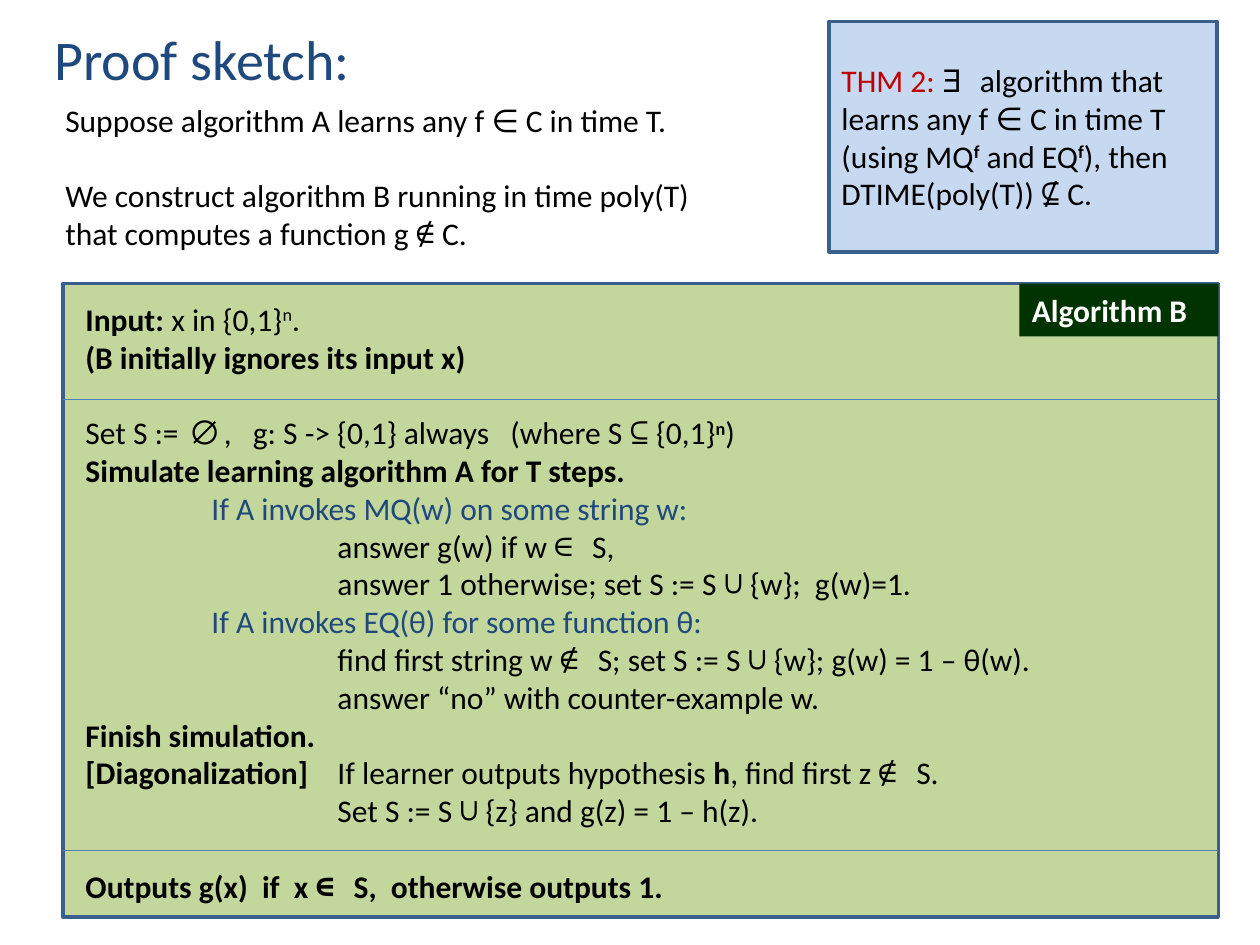
from pptx import Presentation
from pptx.dml.color import RGBColor
from pptx.enum import shapes, text
from pptx.oxml.ns import qn
from pptx.util import Inches, Pt
from lxml import etree

BLACK, NAVY, RED, WHITE = "000000", "1F497D", "C00000", "FFFFFF"
EDGE, RULE = "3A5F8C", "4B7EBC"
COLORS = {"n": NAVY, "r": RED, "w": WHITE}

# Style letters: b bold, m symbol font, ^ superscript, n navy, r red, w white
# Each line: indent in inches, space before in points, runs
TITLE = [(0, 0, [("Proof sketch:", "n")])]
THEOREM = [
    (0, 0, [("THM 2: ", "r"), ("∃ ", "m"),
            ("algorithm that learns any f ∈ C in time T (using MQ", ""),
            ("f", "b^"), (" and EQ", ""), ("f", "b^"), ("), then", "")]),
    (0, 0, [("DTIME(poly(T)) ", ""), ("⊈", "m"), (" C.", "")]),
]
CLAIM = [
    (0, 0, [("Suppose algorithm A learns any f ∈ C in time T.", "")]),
    (0, 21.6, [("We construct algorithm B running in time poly(T)", "")]),
    (0, 0, [("that computes a function g ", ""), ("∉", "m"), (" C.", "")]),
]
ALGORITHM = [
    (0, 0, [("Input:", "b"), (" x in {0,1}", ""), ("n", "^"), (".", "")]),
    (0, 0, [("(B initially ignores its input x)", "b")]),
    (0, 21.6, [("Set S := ", ""), ("∅", "m"),
               (",   g: S -> {0,1} always   (where S ", ""), ("⊆", "m"),
               (" {0,1}", ""), ("n", "b^"), (")", "")]),
    (0, 0, [("Simulate learning algorithm A for T steps.", "b")]),
    (1, 0, [("If A invokes MQ(w) on some string w:", "n")]),
    (2, 0, [("answer g(w) if w ", ""), ("∈ ", "m"), ("S,", "")]),
    (2, 0, [("answer 1 otherwise; set S := S ", ""), ("∪", "m"),
            (" {w};  g(w)=1.", "")]),
    (1, 0, [("If A invokes EQ(θ) for some function θ:", "n")]),
    (2, 0, [("find first string w ", ""), ("∉ ", "m"), ("S; set S := S ", ""),
            ("∪", "m"), (" {w}; g(w) = 1 – θ(w).", "")]),
    (2, 0, [("answer “no” with counter-example w.", "")]),
    (0, 0, [("Finish simulation.", "b")]),
    (0, 0, [("[Diagonalization] \t", "b"), ("If learner outputs hypothesis ", ""),
            ("h", "b"), (", find first z ", ""), ("∉ ", "m"), ("S.", "")]),
    (2, 0, [("Set S := S ", ""), ("∪", "m"), (" {z} and g(z) = 1 – h(z).", "")]),
    (0, 21.6, [("Outputs g(x)  if  x ", "b"), ("∈ ", "bm"),
               ("S,  otherwise outputs 1.", "b")]),
]
LABEL = [(0, 0, [("Algorithm B", "bw")])]

PANEL_LEFT, PANEL_TOP, PANEL_W, PANEL_H = 0.5, 2.25, 9.17, 5.03
RULES_Y = [3.17, 6.75]


def rgb(value):
    return RGBColor.from_string(value)


def box(left, top, width, height):
    return [Inches(v) for v in (left, top, width, height)]


def write(sp, lines, size=18, anchor=text.MSO_ANCHOR.TOP):
    tf = sp.text_frame
    tf.word_wrap = True
    tf.vertical_anchor = anchor
    for i, (indent, before, runs) in enumerate(lines):
        p = tf.paragraphs[0] if i == 0 else tf.add_paragraph()
        p.alignment = text.PP_ALIGN.LEFT
        p.space_before = Pt(before)
        if indent:
            p._p.get_or_add_pPr().set("marL", str(Inches(indent)))
        for words, style in runs:
            r = p.add_run()
            r.text = words
            f = r.font
            f.size = Pt(size)
            f.name = "Noto Sans Mono" if "m" in style else "Calibri"
            f.bold = "b" in style
            f.color.rgb = rgb(next((COLORS[c] for c in style if c in COLORS), BLACK))
            rPr = r._r.get_or_add_rPr()
            if "m" in style:
                for tag in ("a:ea", "a:cs", "a:sym"):
                    if tag != "a:sym":
                        etree.SubElement(rPr, qn(tag)).set("typeface", f.name)
            if "^" in style:
                rPr.set("baseline", "30000")


def add_rect(s, place, fill, line=None):
    sp = s.shapes.add_shape(shapes.MSO_SHAPE.RECTANGLE, *box(*place))
    sp.shadow.inherit = False
    sp.fill.solid()
    sp.fill.fore_color.rgb = rgb(fill)
    if line:
        sp.line.color.rgb = rgb(line)
        sp.line.width = Pt(2)
    else:
        sp.line.fill.background()
    return sp


def add_rule(s, y):
    c = s.shapes.add_connector(
        shapes.MSO_CONNECTOR.STRAIGHT,
        *box(PANEL_LEFT, y, PANEL_LEFT + PANEL_W, y))
    c.line.color.rgb = rgb(RULE)
    c.line.width = Pt(0.75)
    etree.SubElement(c._element.spPr, qn("a:effectLst"))


def main():
    prs = Presentation()
    prs.slide_width, prs.slide_height = Inches(10), Inches(7.5)
    s = prs.slides.add_slide(prs.slide_layouts[5])
    middle = text.MSO_ANCHOR.MIDDLE

    title = s.shapes.title
    title.left, title.top, title.width, title.height = box(0.33, 0, 9.17, 0.92)
    write(title, TITLE, 32, middle)

    theorem = add_rect(s, (6.58, 0.17, 3.08, 1.83), "C6D9F1", EDGE)
    write(theorem, THEOREM, anchor=middle)
    write(s.shapes.add_textbox(*box(0.42, 0.75, 5.33, 1.31)), CLAIM)

    add_rect(s, (PANEL_LEFT, PANEL_TOP, PANEL_W, PANEL_H), "C3D69B", EDGE)
    write(s.shapes.add_textbox(*box(0.58, 2.33, 8.75, 4.95)), ALGORITHM)
    label_w = 1.58
    label_left = PANEL_LEFT + PANEL_W - label_w
    write(add_rect(s, (label_left, PANEL_TOP, label_w, 0.42), "003300"),
          LABEL, anchor=middle)
    for y in RULES_Y:
        add_rule(s, y)

    prs.save("out.pptx")


if __name__ == "__main__":
    main()
